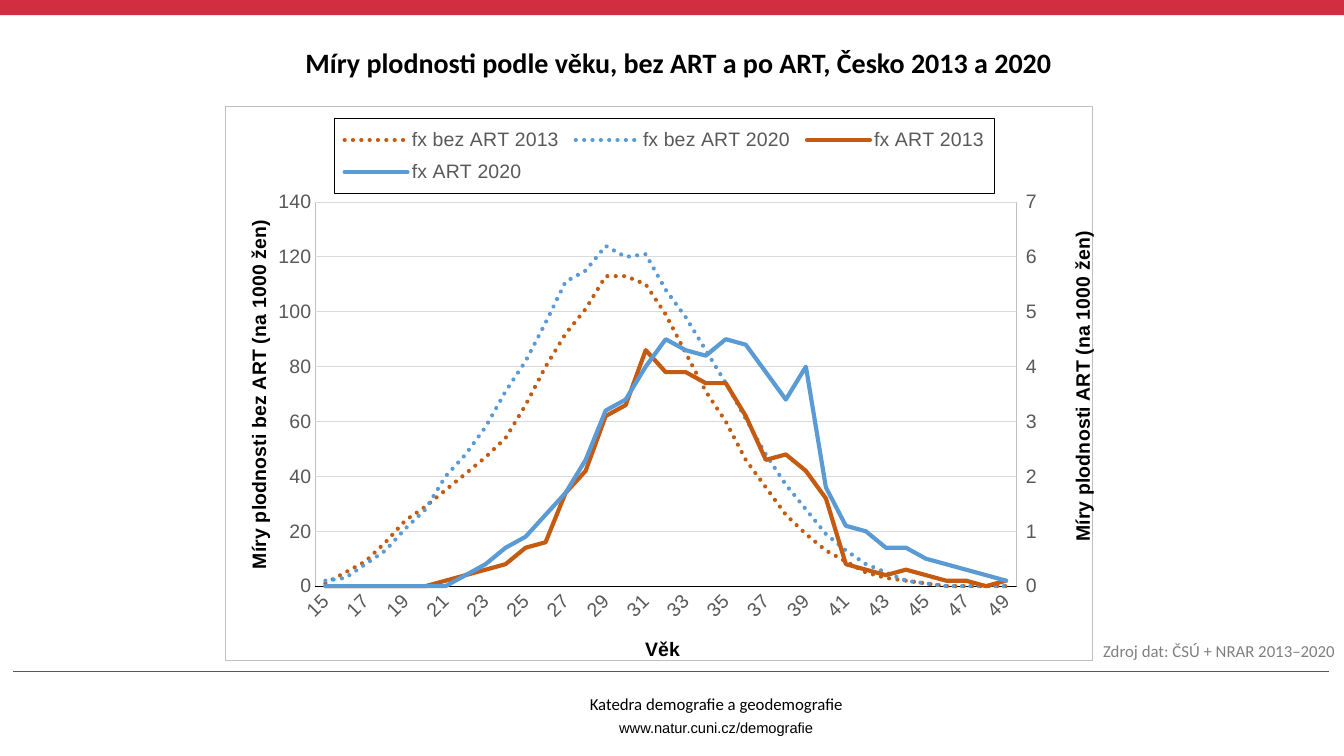
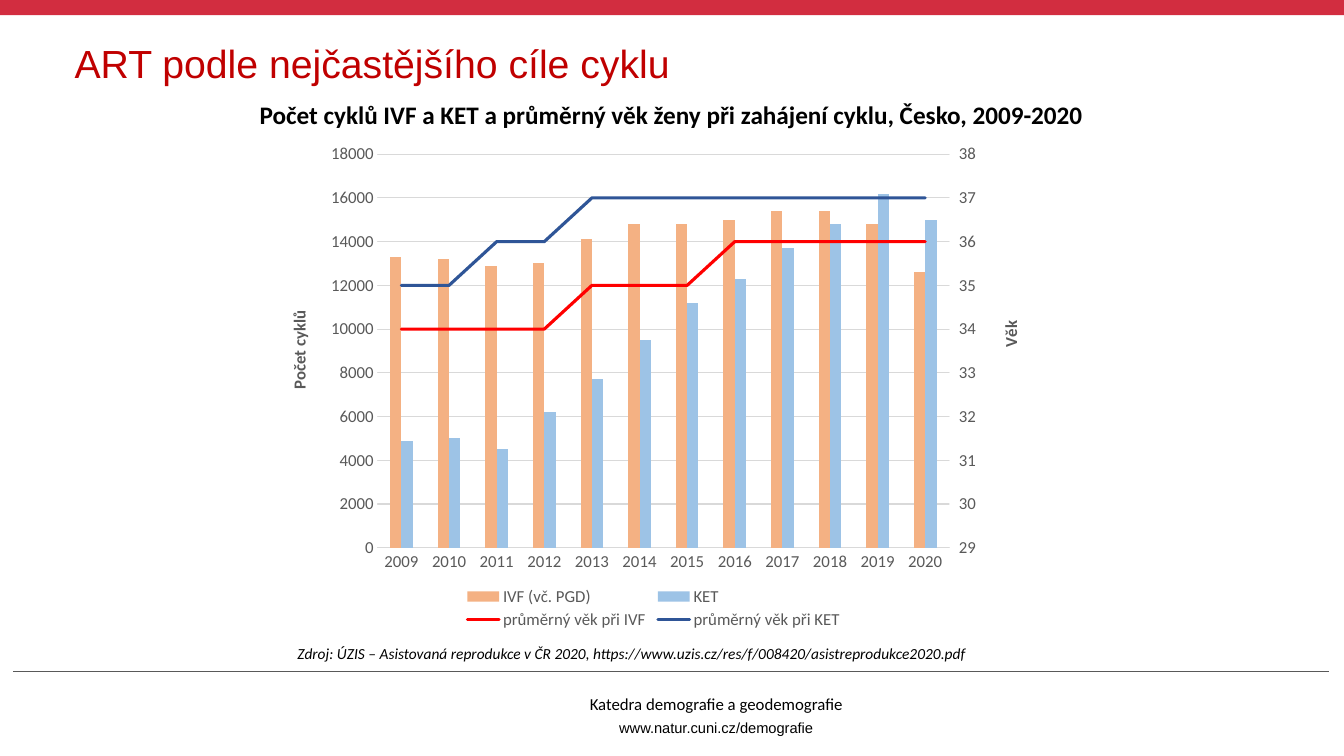
"""Build two slides on fertility rates and assisted reproduction in Czechia."""
from copy import deepcopy
from dataclasses import dataclass

from lxml import etree
from pptx import Presentation
from pptx.chart.axis import ValueAxis
from pptx.chart.data import CategoryChartData
from pptx.dml.color import RGBColor
from pptx.enum.chart import XL_CHART_TYPE as ChartType, XL_LEGEND_POSITION as LegendPosition
from pptx.enum.chart import XL_MARKER_STYLE as Marker, XL_TICK_MARK as TickMark
from pptx.enum.dml import MSO_LINE as Dash
from pptx.enum.shapes import MSO_CONNECTOR as Connector, MSO_SHAPE as Shape
from pptx.enum.text import PP_ALIGN as Align
from pptx.oxml import parse_xml
from pptx.oxml.ns import nsdecls, qn
from pptx.util import Inches, Pt


@dataclass(frozen=True)
class Theme:
    band: str = "D22D40"
    rule: str = "595959"
    heading: str = "C00000"
    ink: str = "000000"
    label: str = "595959"
    source: str = "808080"
    grid: str = "D9D9D9"
    frame: str = "BFBFBF"
    orange: str = "C55A11"
    blue: str = "5B9BD5"
    light_orange: str = "F4B183"
    light_blue: str = "9DC3E6"
    red: str = "FF0000"
    navy: str = "2F5597"
    body_font: str = "Calibri"
    plain_font: str = "Arial"
    heading_size: float = 28
    title_size: float = 20
    subtitle_size: float = 18
    axis_size: float = 14
    small_size: float = 12
    note_size: float = 11
    web_size: float = 10.5


theme = Theme()


def add_text(page, place, *lines, size=theme.small_size, font=theme.body_font, color=theme.ink,
             bold=False, italic=False, align=Align.LEFT, spacing=1.0):
    """Add a text box; each line is a text or a (text, font, size) tuple."""
    box = page.shapes.add_textbox(*map(Inches, place))
    frame = box.text_frame
    frame.word_wrap = True
    frame.margin_left = frame.margin_right = frame.margin_top = frame.margin_bottom = 0
    for index, line in enumerate(lines):
        text, face, points = (line, font, size) if isinstance(line, str) else line
        para = frame.paragraphs[0] if index == 0 else frame.add_paragraph()
        para.alignment, para.line_spacing = align, spacing
        span = para.add_run()
        span.text = text
        span.font.name, span.font.size = face, Pt(points)
        span.font.bold, span.font.italic = bold, italic
        span.font.color.rgb = RGBColor.from_string(color)


def place_part(parent, index, *numbers, inner=False):
    """Give a chart part a manual layout (x, y and maybe w, h) in fractions of the chart."""
    for layout in parent.findall(qn("c:layout")):
        parent.remove(layout)
    target = '<c:layoutTarget val="inner"/>' if inner else ""
    values = "".join(f'<c:{name} val="{number}"/>' for name, number in zip("xywh", numbers))
    parent.insert(index, parse_xml(
        f'<c:layout {nsdecls("c")}><c:manualLayout>{target}<c:xMode val="edge"/>'
        f'<c:yMode val="edge"/>{values}</c:manualLayout></c:layout>'))


deck = Presentation()
deck.slide_width, deck.slide_height = Inches(13.33), Inches(7.5)
pages = [deck.slides.add_slide(deck.slide_layouts[6]) for _ in range(2)]

for page in pages:
    band = page.shapes.add_shape(Shape.RECTANGLE, 0, 0, deck.slide_width, Inches(0.15))
    band.shadow.inherit = False
    band.fill.solid()
    band.fill.fore_color.rgb = RGBColor.from_string(theme.band)
    band.line.fill.background()
    rule = page.shapes.add_connector(
        Connector.STRAIGHT, Inches(0.13), Inches(6.66), Inches(13.18), Inches(6.66))
    rule.line.color.rgb = RGBColor.from_string(theme.rule)
    rule.line.width = Pt(0.75)
    etree.SubElement(rule.element.spPr, qn("a:effectLst"))
    add_text(page, (5.23, 6.82, 3.75, 0.68), "Katedra demografie a geodemografie",
             ("www.natur.cuni.cz/demografie", theme.plain_font, theme.web_size),
             align=Align.CENTER, spacing=1.3)

fertility_page, cycles_page = pages
add_text(fertility_page, (3.03, 0.45, 7.69, 0.54),
         "Míry plodnosti podle věku, bez ART a po ART, Česko 2013 a 2020",
         size=theme.title_size, bold=True)
add_text(cycles_page, (0.74, 0.25, 12.07, 0.54), "ART podle nejčastějšího cíle cyklu",
         size=theme.heading_size, font=theme.plain_font, color=theme.heading, spacing=1.3)
add_text(cycles_page, (2.06, 0.99, 9.2, 0.54),
         "Počet cyklů IVF a KET a průměrný věk ženy při zahájení cyklu, Česko, 2009-2020",
         size=theme.subtitle_size, bold=True, align=Align.CENTER)

charts = [
    dict(page=fertility_page, place=(2.23, 1.05, 8.68, 5.56), kind=ChartType.LINE,
         font=theme.plain_font, size=theme.axis_size, title_color=theme.ink, axis_color=theme.ink,
         titles=[("Míry plodnosti bez ART (na 1000 žen)", 0.02, 0.2),
                 ("Míry plodnosti ART (na 1000 žen)", 0.97, 0.22), ("Věk", 0.48, 0.95)],
         left=(0, 140, 20), right=(0, 7, 1), plot=(0.104, 0.173, 0.808, 0.693),
         legend=(0.126, 0.023, 0.761, 0.134), framed=True, width=3,
         categories=range(15, 50),
         series=[
             ("fx bez ART 2013", theme.orange,
              [1, 5, 9, 16, 24, 29, 35, 41, 47, 54, 66, 80, 92, 101, 113, 113, 110, 99, 85, 71, 60,
               46, 36, 26, 19, 13, 9, 5, 3, 2, 1, 0, 0, 0, 0]),
             ("fx bez ART 2020", theme.blue,
              [2, 3, 8, 13, 21, 28, 40, 48, 58, 71, 82, 96, 111, 115, 124, 120, 121, 108, 98, 86, 74,
               61, 48, 37, 28, 19, 13, 8, 5, 2, 1, 0, 0, 0, 0]),
             ("fx ART 2013", theme.orange,
              [0, 0, 0, 0, 0, 0, 0.1, 0.2, 0.3, 0.4, 0.7, 0.8, 1.7, 2.1, 3.1, 3.3, 4.3, 3.9, 3.9, 3.7,
               3.7, 3.1, 2.3, 2.4, 2.1, 1.6, 0.4, 0.3, 0.2, 0.3, 0.2, 0.1, 0.1, 0, 0.1]),
             ("fx ART 2020", theme.blue,
              [0, 0, 0, 0, 0, 0, 0, 0.2, 0.4, 0.7, 0.9, 1.3, 1.7, 2.3, 3.2, 3.4, 4, 4.5, 4.3, 4.2,
               4.5, 4.4, 3.9, 3.4, 4, 1.8, 1.1, 1, 0.7, 0.7, 0.5, 0.4, 0.3, 0.2, 0.1]),
         ]),
    dict(page=cycles_page, place=(2.75, 1.3, 7.43, 5), kind=ChartType.COLUMN_CLUSTERED,
         font=theme.body_font, size=theme.small_size, title_color=theme.label, axis_color=theme.grid,
         titles=[("Počet cyklů", 0.01, 0.35), ("Věk", 0.96, 0.37)],
         left=(0, 18000, 2000), right=(29, 38, 1), plot=(0.134, 0.046, 0.763, 0.781),
         legend=(0.245, 0.898, 0.515, 0.097), framed=False, width=2.25,
         categories=range(2009, 2021),
         series=[
             ("IVF (vč. PGD)", theme.light_orange,
              [13300, 13200, 12900, 13000, 14100, 14800, 14800, 15000, 15400, 15400, 14800, 12600]),
             ("KET", theme.light_blue,
              [4900, 5000, 4500, 6200, 7700, 9500, 11200, 12300, 13700, 14800, 16200, 15000]),
             ("průměrný věk při IVF", theme.red,
              [34, 34, 34, 34, 35, 35, 35, 36, 36, 36, 36, 36]),
             ("průměrný věk při KET", theme.navy,
              [35, 35, 36, 36, 37, 37, 37, 37, 37, 37, 37, 37]),
         ]),
]

for item in charts:
    data = CategoryChartData()
    data.categories = [str(category) for category in item["categories"]]
    for name, _, values in item["series"]:
        data.add_series(name, values)
    chart = item["page"].shapes.add_chart(item["kind"], *map(Inches, item["place"]), data).chart
    chart.has_title = False
    chart.font.name, chart.font.size = item["font"], Pt(item["size"])
    chart.font.color.rgb = RGBColor.from_string(theme.label)
    has_lines = item["kind"] == ChartType.LINE

    area = chart.element.find(f'.//{qn("c:plotArea")}')
    place_part(area, 0, *item["plot"], inner=True)
    category_axis, left_axis = chart.category_axis, chart.value_axis
    category_axis.major_tick_mark = TickMark.NONE
    category_axis.format.line.color.rgb = RGBColor.from_string(item["axis_color"])
    category_axis.format.line.width = Pt(0.75)
    left_axis.has_major_gridlines = True
    left_axis.major_gridlines.format.line.color.rgb = RGBColor.from_string(theme.grid)
    left_axis.major_gridlines.format.line.width = Pt(0.75)

    category_node, left_node = area.find(qn("c:catAx")), area.find(qn("c:valAx"))
    right_node, hidden_node = deepcopy(left_node), deepcopy(category_node)
    left_node.addnext(right_node)
    right_node.addnext(hidden_node)
    for node, own, other in ((right_node, "5001", "5002"), (hidden_node, "5002", "5001")):
        node.find(qn("c:axId")).set("val", own)
        node.find(qn("c:crossAx")).set("val", other)
    right_node.find(qn("c:axPos")).set("val", "r")
    right_node.find(qn("c:crosses")).set("val", "max")
    hidden_node.find(qn("c:delete")).set("val", "1")
    right_axis = ValueAxis(right_node)
    right_axis.has_major_gridlines = False

    for axis, limits, tick in ((left_axis, item["left"], TickMark.NONE),
                               (right_axis, item["right"], TickMark.OUTSIDE)):
        axis.minimum_scale, axis.maximum_scale, axis.major_unit = limits
        axis.major_tick_mark = tick
        axis.tick_labels.number_format = "0"
        axis.tick_labels.number_format_is_linked = False
        axis.format.line.fill.background()

    for axis in (left_axis, right_axis, category_axis):
        axis.tick_labels.font.name = item["font"]
        axis.tick_labels.font.size = Pt(item["size"])
        axis.tick_labels.font.color.rgb = RGBColor.from_string(theme.label)
    for axis, (title, x, y) in zip((left_axis, right_axis, category_axis), item["titles"]):
        span = axis.axis_title.text_frame.paragraphs[0].add_run()
        span.text = title
        span.font.bold, span.font.size, span.font.name = True, Pt(item["size"]), item["font"]
        span.font.color.rgb = RGBColor.from_string(item["title_color"])
        title_node = axis.axis_title.element
        place_part(title_node, 1, x, y)
        if axis is not category_axis:
            title_node.find(f'.//{qn("a:bodyPr")}').set("rot", "-5400000")
    if has_lines:
        category_node.find(f'{qn("c:txPr")}/{qn("a:bodyPr")}').set("rot", "-2700000")

    main_plot = chart.plots[0]
    if not has_lines:
        main_plot.gap_width, main_plot.overlap = 219, 0
    line_node = parse_xml(
        f'<c:lineChart {nsdecls("c")}><c:grouping val="standard"/><c:varyColors val="0"/>'
        '<c:marker val="1"/><c:axId val="5002"/><c:axId val="5001"/></c:lineChart>')
    category_node.addprevious(line_node)
    for node in area.findall(f'*/{qn("c:ser")}')[2:]:
        for flag in node.findall(qn("c:invertIfNegative")):
            node.remove(flag)
        line_node.find(qn("c:marker")).addprevious(node)

    for plot in chart.plots:
        plot.vary_by_categories = False
    all_series = [series for plot in chart.plots for series in plot.series]
    for index, (series, (_, color, _)) in enumerate(zip(all_series, item["series"])):
        if index < 2 and not has_lines:
            series.format.fill.solid()
            series.format.fill.fore_color.rgb = RGBColor.from_string(color)
            continue
        series.smooth = False
        series.marker.style = Marker.NONE
        series.format.line.color.rgb = RGBColor.from_string(color)
        series.format.line.width = Pt(item["width"])
        if index < 2:
            series.format.line.dash_style = Dash.ROUND_DOT
    for line in area.iter(qn("a:ln")):
        line.set("cap", "rnd")

    chart.has_legend = True
    chart.legend.position = LegendPosition.BOTTOM
    chart.legend.include_in_layout = False
    chart.legend.font.name, chart.legend.font.size = item["font"], Pt(item["size"])
    chart.legend.font.color.rgb = RGBColor.from_string(theme.label)
    legend_node = chart.element.find(f'.//{qn("c:legend")}')
    place_part(legend_node, 1, *item["legend"])
    if item["framed"]:
        frames = ((legend_node.find(qn("c:overlay")), theme.ink, Pt(0.75)),
                  (area[-1], theme.frame, Pt(0.5)),
                  (chart.element.find(qn("c:chart")), theme.frame, Pt(0.5)))
        for node, color, width in frames:
            node.addnext(parse_xml(
                f'<c:spPr {nsdecls("c", "a")}><a:solidFill><a:srgbClr val="FFFFFF"/></a:solidFill>'
                f'<a:ln w="{width}"><a:solidFill><a:srgbClr val="{color}"/></a:solidFill></a:ln></c:spPr>'))

add_text(fertility_page, (10.94, 6.36, 2.39, 0.2), "Zdroj dat: ČSÚ + NRAR 2013–2020",
         color=theme.source)
add_text(cycles_page, (2.95, 6.39, 7.81, 0.19),
         "Zdroj: ÚZIS – Asistovaná reprodukce v ČR 2020, "
         "https://www.uzis.cz/res/f/008420/asistreprodukce2020.pdf",
         size=theme.note_size, italic=True)

deck.save("out.pptx")
